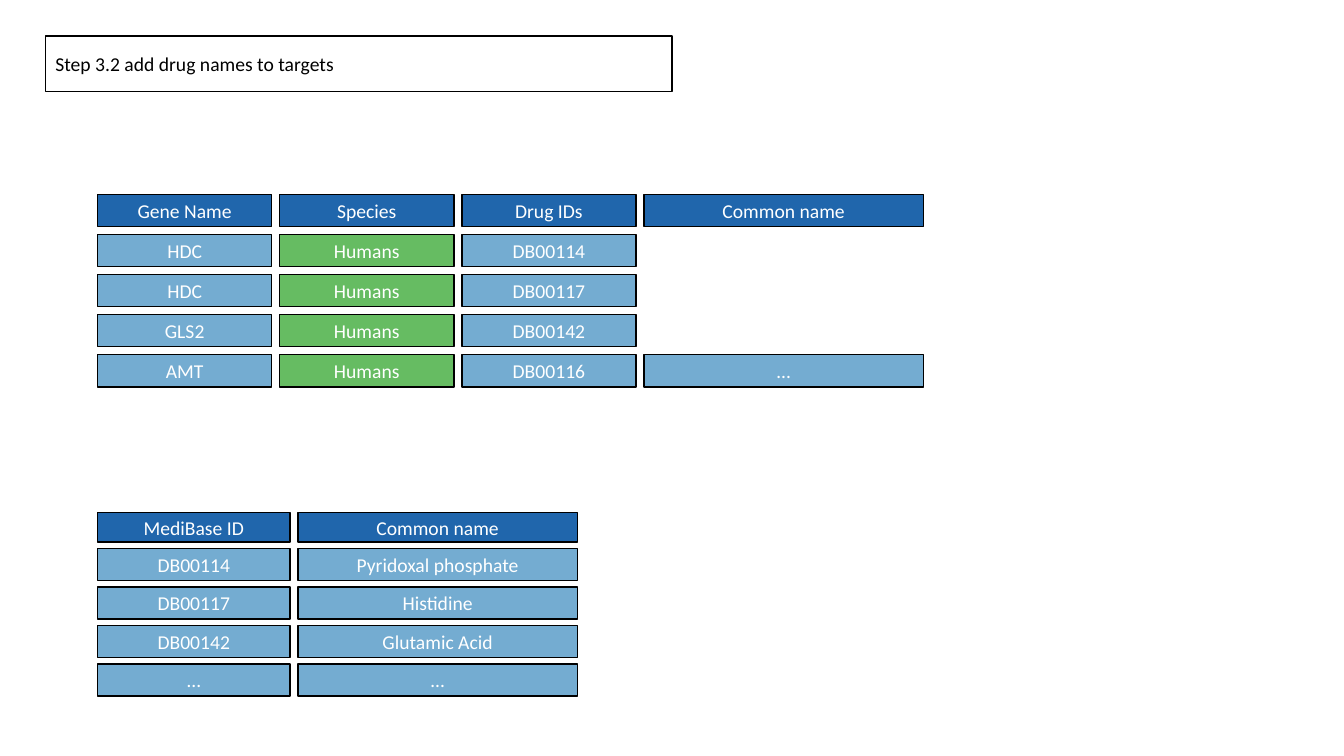
from dataclasses import dataclass

from pptx import Presentation
from pptx.dml.color import RGBColor
from pptx.enum.shapes import MSO_SHAPE
from pptx.enum.text import MSO_ANCHOR, MSO_AUTO_SIZE, PP_ALIGN
from pptx.util import Cm, Pt

RECTANGLE = MSO_SHAPE.RECTANGLE
MIDDLE = MSO_ANCHOR.MIDDLE
NO_AUTOFIT = MSO_AUTO_SIZE.NONE
LEFT, CENTER = PP_ALIGN.LEFT, PP_ALIGN.CENTER

# Content: None marks a cell that is still open
TITLE = "Step 3.2 add drug names to targets"

TARGETS = {
    "headers": ["Gene Name", "Species", "Drug IDs", "Common name"],
    "rows": [
        ["HDC", "Humans", "DB00114", None],
        ["HDC", "Humans", "DB00117", None],
        ["GLS2", "Humans", "DB00142", None],
        ["AMT", "Humans", "DB00116", "…"],
    ],
    "top": 4.9,
    "widths": [4.39, 4.39, 4.39, 7.04],
    "header_height": 0.81,
    "row_gap": 0.2,
}

DRUG_NAMES = {
    "headers": ["MediBase ID", "Common name"],
    "rows": [
        ["DB00114", "Pyridoxal phosphate"],
        ["DB00117", "Histidine"],
        ["DB00142", "Glutamic Acid"],
        ["…", "…"],
    ],
    "top": 12.92,
    "widths": [4.85, 7.04],
    "header_height": 0.74,
    "row_gap": 0.16,
}

# Shared measures in centimetres
GRID_LEFT = 2.46
COLUMN_GAP = 0.2
ROW_HEIGHT = 0.81


@dataclass(frozen=True)
class Theme:
    font: str = "Calibri"
    size: Pt = Pt(14)
    outline: Pt = Pt(1)
    black: RGBColor = RGBColor(0x00, 0x00, 0x00)
    white: RGBColor = RGBColor(0xFF, 0xFF, 0xFF)
    header: RGBColor = RGBColor(0x20, 0x66, 0xAC)
    cell: RGBColor = RGBColor(0x74, 0xAC, 0xD1)
    species: RGBColor = RGBColor(0x66, 0xBC, 0x62)


THEME = Theme()


def write(box, text, color, alignment):
    """Outline a box and put one line of text in it."""
    box.line.color.rgb = THEME.black
    box.line.width = THEME.outline
    frame = box.text_frame
    frame.auto_size = NO_AUTOFIT
    frame.word_wrap = True
    frame.vertical_anchor = MIDDLE
    para = frame.paragraphs[0]
    para.alignment = alignment
    span = para.add_run()
    span.text = text
    span.font.name = THEME.font
    span.font.size = THEME.size
    span.font.color.rgb = color


def add_cell(page, text, left, top, width, height, fill):
    box = page.shapes.add_shape(RECTANGLE, Cm(left), Cm(top), Cm(width), Cm(height))
    box.shadow.inherit = False
    box.fill.solid()
    box.fill.fore_color.rgb = fill
    write(box, text, THEME.white, CENTER)


def add_grid(page, grid):
    """Stack the header and rows, each cell a separate box."""
    top = grid["top"]
    for row_index, row in enumerate([grid["headers"], *grid["rows"]]):
        height = ROW_HEIGHT if row_index else grid["header_height"]
        left = GRID_LEFT
        for heading, text, width in zip(grid["headers"], row, grid["widths"]):
            if row_index == 0:
                fill = THEME.header
            else:
                fill = THEME.species if heading == "Species" else THEME.cell
            if text is not None:
                add_cell(page, text, left, top, width, height, fill)
            left += width + COLUMN_GAP
        top += height + grid["row_gap"]


def main():
    deck = Presentation()
    deck.slide_width, deck.slide_height = Cm(33.87), Cm(19.05)
    page = deck.slides.add_slide(deck.slide_layouts[5])

    # Step title
    title = page.shapes.title
    title.left, title.top = Cm(1.14), Cm(0.91)
    title.width, title.height = Cm(15.8), Cm(1.4)
    write(title, TITLE, THEME.black, LEFT)

    # Targets above, drug names below
    for grid in (TARGETS, DRUG_NAMES):
        add_grid(page, grid)

    deck.save("out.pptx")


if __name__ == "__main__":
    main()
